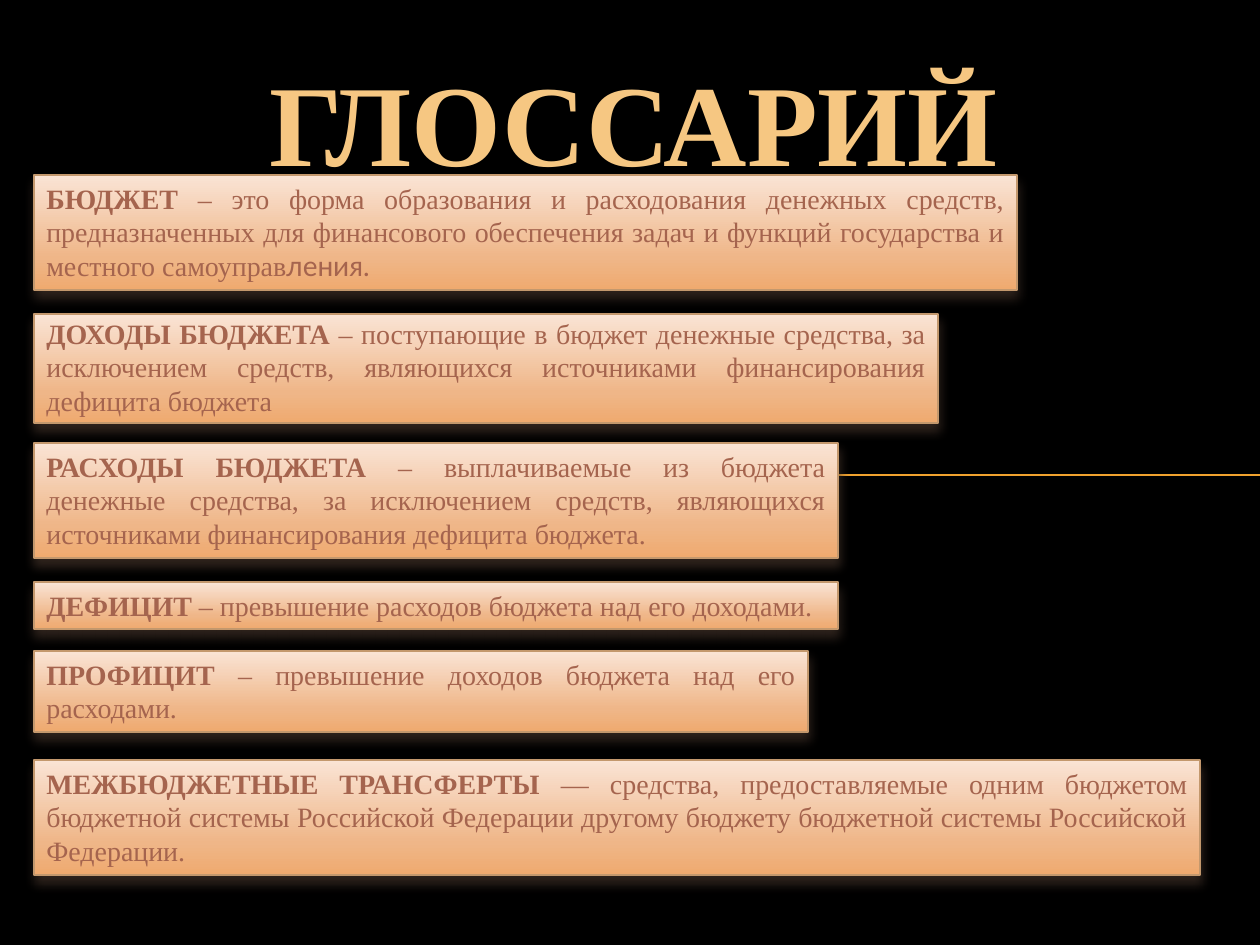
"""Build the budget glossary slide."""
from lxml.etree import SubElement
from pptx import Presentation
from pptx.dml.color import RGBColor
from pptx.enum.shapes import MSO_CONNECTOR, MSO_SHAPE
from pptx.enum.text import MSO_ANCHOR as ANCHOR, PP_ALIGN as ALIGN
from pptx.oxml.ns import qn
from pptx.util import Emu, Pt

PX = 914400 // 126
SERIF, SANS = "Times New Roman", "Lato"
BLACK = RGBColor(0x00, 0x00, 0x00)
GOLD = RGBColor(0xF6, 0xC7, 0x82)
AMBER = RGBColor(0xF0, 0xA2, 0x2E)
RUST = RGBColor(0xA5, 0x64, 0x4E)
BORDER = RGBColor(0xC3, 0x98, 0x6D)
SHADOW = RGBColor(0x4E, 0x3B, 0x30)
GRADIENT = [
    (0, RGBColor(0xFA, 0xE4, 0xD5)),
    (72, RGBColor(0xEF, 0xB6, 0x88)),
    (100, RGBColor(0xEF, 0xAA, 0x6F)),
]

TITLE = "ГЛОССАРИЙ"
TITLE_BOX = (35, 38, 1197, 164)
RULE = (71, 475, 1260, 475)
LEFT = 34
CARDS = [
    (175, 983, 115, ANCHOR.TOP, "БЮДЖЕТ",
     " – это форма образования и расходования денежных средств, предназначенных "
     "для финансового обеспечения задач и функций государства и местного самоуправ",
     "ления."),
    (314, 904, 109, ANCHOR.BOTTOM, "ДОХОДЫ БЮДЖЕТА",
     " – поступающие в бюджет денежные средства, за исключением средств, "
     "являющихся источниками финансирования дефицита бюджета", ""),
    (443, 804, 115, ANCHOR.TOP, "РАСХОДЫ БЮДЖЕТА",
     " – выплачиваемые из бюджета денежные средства, за исключением средств, "
     "являющихся источниками финансирования дефицита бюджета.", ""),
    (582, 804, 47, ANCHOR.TOP, "ДЕФИЦИТ",
     " – превышение расходов бюджета над его доходами.", ""),
    (651, 774, 81, ANCHOR.TOP, "ПРОФИЦИТ",
     " – превышение доходов бюджета над его расходами.", ""),
    (760, 1166, 115, ANCHOR.TOP, "МЕЖБЮДЖЕТНЫЕ ТРАНСФЕРТЫ",
     " — средства, предоставляемые одним бюджетом бюджетной системы Российской "
     "Федерации другому бюджету бюджетной системы Российской Федерации.", ""),
]


def px(*lengths):
    return [Emu(length * PX) for length in lengths]


def add_run(paragraph, text, color, **formats):
    run = paragraph.add_run()
    run.text = text
    run.font.color.rgb = color
    for name, value in formats.items():
        setattr(run.font, name, value)


def set_gradient(shape):
    shape.fill.gradient()
    shape.fill.gradient_angle = 270
    stops = shape._element.spPr.find(".//" + qn("a:gsLst"))
    stops.clear()
    for position, color in GRADIENT:
        stop = SubElement(stops, qn("a:gs"), pos=str(position * 1000))
        SubElement(stop, qn("a:srgbClr"), val=str(color))


def set_shadow(shape):
    effects = SubElement(shape._element.spPr, qn("a:effectLst"))
    shadow = SubElement(effects, qn("a:outerShdw"), blurRad=str(Pt(6)),
                        dist=str(Pt(4)), dir="5400000", rotWithShape="0")
    color = SubElement(shadow, qn("a:srgbClr"), val=str(SHADOW))
    SubElement(color, qn("a:alpha"), val="60000")


def add_rule(slide):
    rule = slide.shapes.add_connector(MSO_CONNECTOR.STRAIGHT, *px(*RULE))
    rule.line.color.rgb = AMBER
    rule.line.width = Pt(0.75)
    SubElement(rule._element.spPr, qn("a:effectLst"))


def add_title(slide):
    frame = slide.shapes.add_textbox(*px(*TITLE_BOX)).text_frame
    frame.word_wrap = True
    frame.vertical_anchor = ANCHOR.MIDDLE
    paragraph = frame.paragraphs[0]
    paragraph.alignment = ALIGN.CENTER
    add_run(paragraph, TITLE, GOLD, name=SERIF, size=Pt(66), bold=True)


def add_card(slide, top, width, height, anchor, term, meaning, ending):
    shape = slide.shapes.add_shape(MSO_SHAPE.RECTANGLE, *px(LEFT, top, width, height))
    set_gradient(shape)
    shape.line.color.rgb = BORDER
    shape.line.width = Pt(0.79)
    set_shadow(shape)
    frame = shape.text_frame
    frame.word_wrap = True
    frame.vertical_anchor = anchor
    paragraph = frame.paragraphs[0]
    paragraph.alignment = ALIGN.JUSTIFY
    for text, font, bold in ((term, SERIF, True), (meaning, SERIF, False), (ending, SANS, False)):
        if text:
            add_run(paragraph, text, RUST, name=font, size=Pt(16), bold=bold)


def main():
    presentation = Presentation()
    presentation.slide_width, presentation.slide_height = px(1260, 945)
    slide = presentation.slides.add_slide(presentation.slide_layouts[6])
    slide.background.fill.solid()
    slide.background.fill.fore_color.rgb = BLACK
    add_rule(slide)
    add_title(slide)
    for card in CARDS:
        add_card(slide, *card)
    presentation.save("out.pptx")


if __name__ == "__main__":
    main()
